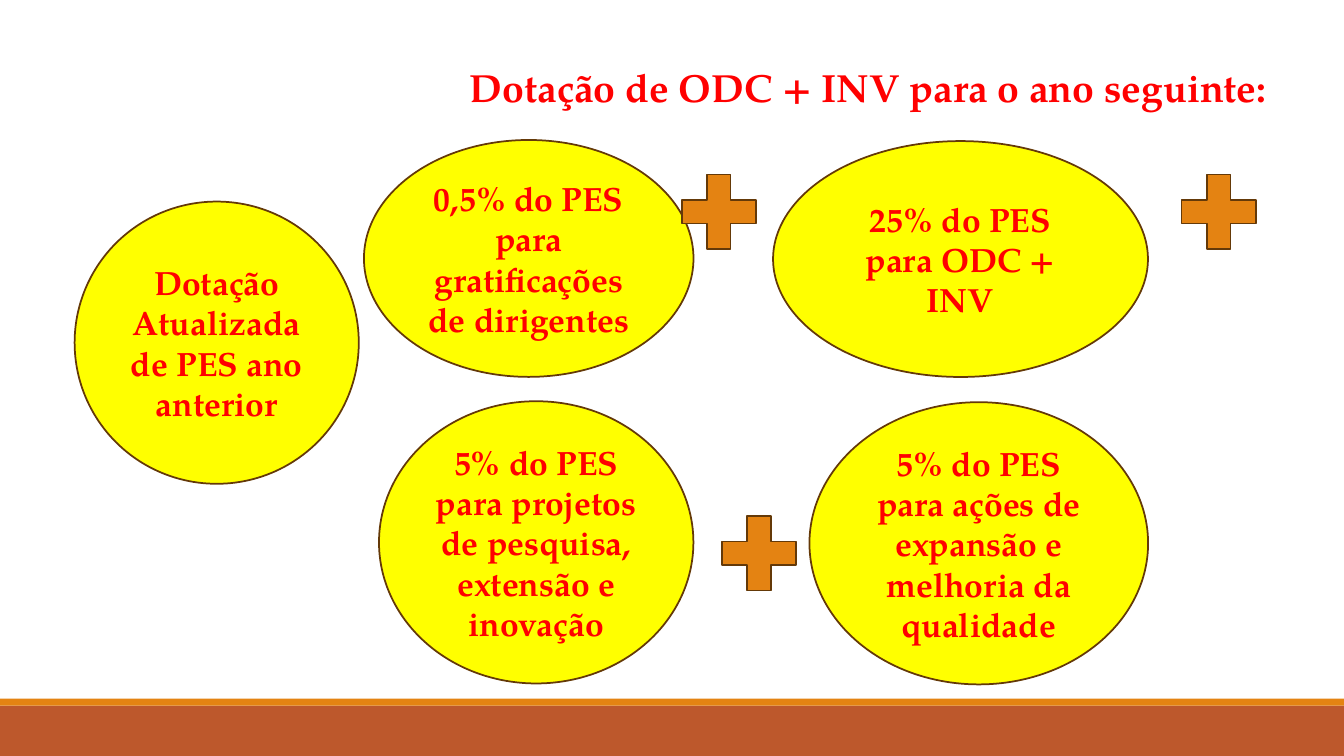
from pptx import Presentation
from pptx.dml.color import RGBColor
from pptx.enum.shapes import MSO_SHAPE
from pptx.enum.text import MSO_ANCHOR, MSO_AUTO_SIZE, PP_ALIGN
from pptx.util import Pt

RED = RGBColor(0xFF, 0x00, 0x00)
YELLOW = RGBColor(0xFF, 0xFF, 0x00)
ORANGE = RGBColor(0xE4, 0x83, 0x12)
RUST = RGBColor(0xBD, 0x58, 0x2C)
BROWN = RGBColor(0x64, 0x39, 0x08)

WIDTH, HEIGHT = 960, 540
PLUS = 72


class Board:
    """Style and current slide; all lengths in points."""
    font = "TeX Gyre Pagella"

    def __init__(self, slide):
        self.slide = slide

    def label(self, shape, text, size, align, anchor, wrap):
        frame = shape.text_frame
        frame.text = text
        frame.word_wrap = wrap
        frame.auto_size = MSO_AUTO_SIZE.NONE
        frame.vertical_anchor = anchor
        para = frame.paragraphs[0]
        para.alignment = align
        para.line_spacing = 1.0
        para.space_before = Pt(0)
        font = para.font
        font.name, font.size, font.bold = self.font, Pt(size), True
        font.color.rgb = RED

    def title(self, text, left, top, width, height):
        shape = self.slide.shapes.title
        shape.left, shape.top = Pt(left), Pt(top)
        shape.width, shape.height = Pt(width), Pt(height)
        self.label(shape, text, 28, PP_ALIGN.LEFT, MSO_ANCHOR.TOP, False)

    def shape(self, kind, box, fill, line=None):
        shape = self.slide.shapes.add_shape(kind, *map(Pt, box))
        shape.shadow.inherit = False
        shape.fill.solid()
        shape.fill.fore_color.rgb = fill
        if line is None:
            shape.line.fill.background()
        else:
            shape.line.color.rgb = line
            shape.line.width = Pt(1.25)
        return shape

    def bar(self, top, height, fill):
        self.shape(MSO_SHAPE.RECTANGLE, (0, top, WIDTH, height), fill)

    def oval(self, text, *box):
        shape = self.shape(MSO_SHAPE.OVAL, box, YELLOW, BROWN)
        self.label(shape, text, 24, PP_ALIGN.CENTER, MSO_ANCHOR.MIDDLE, True)

    def plus(self, left, top):
        self.shape(MSO_SHAPE.MATH_PLUS, (left, top, PLUS, PLUS), ORANGE, BROWN)


def main():
    deck = Presentation()
    deck.slide_width, deck.slide_height = Pt(WIDTH), Pt(HEIGHT)
    board = Board(deck.slides.add_slide(deck.slide_layouts[5]))

    # Footer bands
    board.bar(504, 36, RUST)
    board.bar(499, 5, ORANGE)

    # Heading
    board.title("Dotação de ODC + INV para o ano seguinte:", 328.3, 41.8, 589.7, 41)

    # Starting budget and its four shares
    board.oval("Dotação Atualizada de PES ano anterior", 53.3, 144, 203, 201.6)
    board.oval("0,5% do PES para gratificações de dirigentes", 260, 100, 235.4, 169.2)
    board.oval("25% do PES para ODC + INV", 552.2, 100.8, 267.8, 168.5)
    board.oval("5% do PES para projetos de pesquisa, extensão e inovação",
               270.7, 286.6, 224.6, 201.6)
    board.oval("5% do PES para ações de expansão e melhoria da qualidade",
               578.2, 287.3, 241.9, 201.6)

    # Plus signs between the shares
    for left, top in ((477.4, 115.2), (834.5, 115.2), (506.2, 359.3)):
        board.plus(left, top)

    deck.save("out.pptx")


if __name__ == "__main__":
    main()
